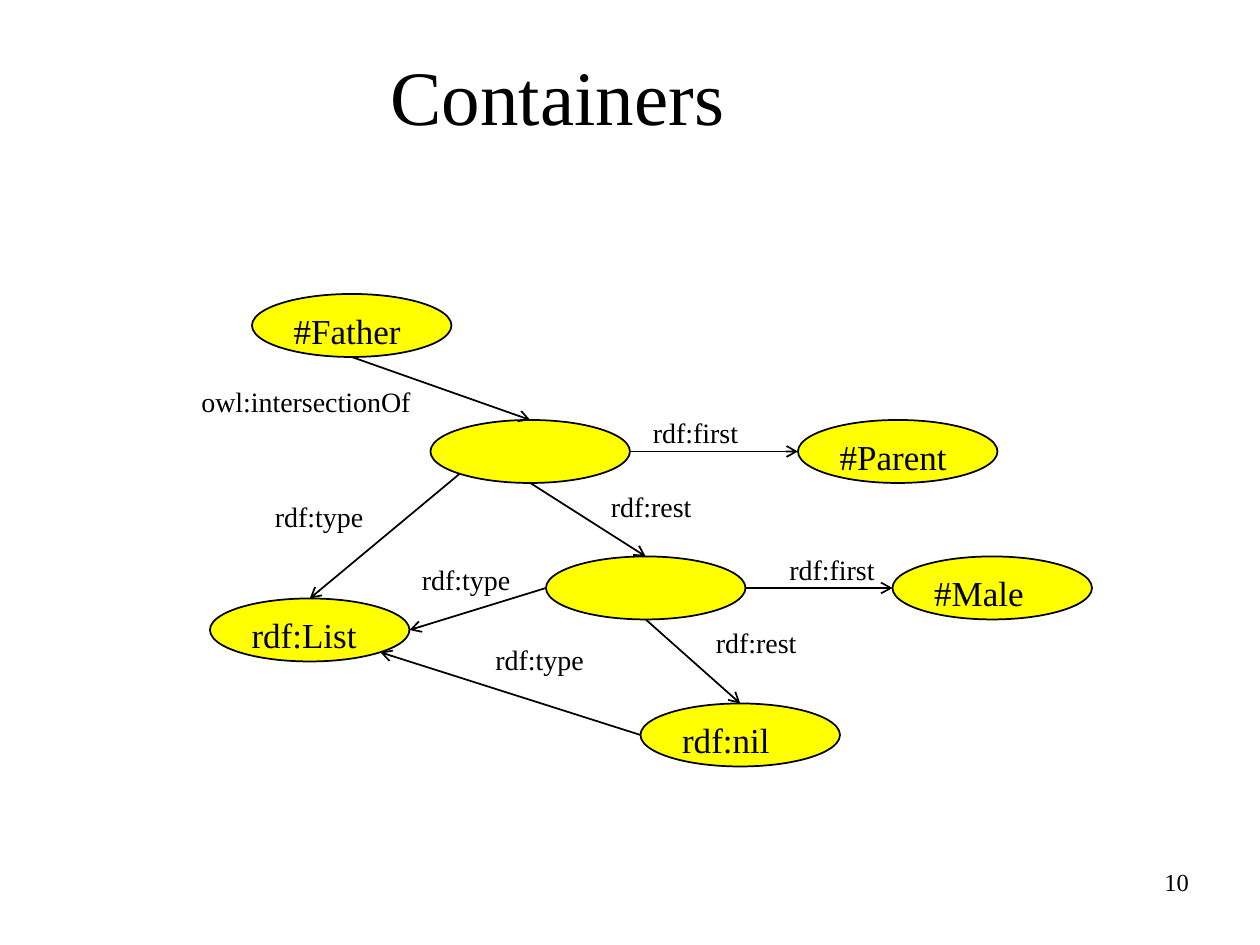
from dataclasses import dataclass
from math import sqrt

from lxml import etree
from pptx import Presentation
from pptx.dml.color import RGBColor
from pptx.enum import shapes, text
from pptx.oxml import ns
from pptx.util import Pt


@dataclass(frozen=True)
class Theme:
    font: str = "Times New Roman"
    ink: RGBColor = RGBColor(0, 0, 0)
    node_fill: RGBColor = RGBColor(0xFF, 0xFF, 0)
    paper: RGBColor = RGBColor(0xFF, 0xFF, 0xFF)
    title_size: int = 44
    node_size: int = 20
    label_size: int = 16
    number_size: int = 14
    line_width: int = 1


@dataclass(frozen=True)
class Node:
    left: float
    top: float
    caption: str = ""


@dataclass(frozen=True)
class Edge:
    source: str
    source_side: str
    target: str
    target_side: str


@dataclass(frozen=True)
class Label:
    caption: str
    left: float
    top: float


THEME = Theme()
NODE_WIDTH, NODE_HEIGHT = 114, 36
LABEL_HEIGHT = 26.6
LABEL_WIDTHS = {"owl:intersectionOf": 136, "rdf:type": 66, "rdf:first": 64, "rdf:rest": 61}
DIAGONAL = (1 - sqrt(0.5)) / 2
SIDES = {
    "top": (0.5, 0),
    "bottom": (0.5, 1),
    "left": (0, 0.5),
    "right": (1, 0.5),
    "bottom left": (DIAGONAL, 1 - DIAGONAL),
    "bottom right": (1 - DIAGONAL, 1 - DIAGONAL),
}

NODES = {
    "parent": Node(456, 240, "#Parent"),
    "male": Node(510, 318, "#Male"),
    "nil": Node(366, 402, "rdf:nil"),
    "list": Node(120, 342, "rdf:List"),
    "second cell": Node(312, 318),
    "first cell": Node(246, 240),
    "father": Node(144, 168, "#Father"),
}
EDGES = [
    Edge("father", "bottom", "first cell", "top"),
    Edge("first cell", "bottom left", "list", "top"),
    Edge("second cell", "left", "list", "right"),
    Edge("first cell", "bottom", "second cell", "top"),
    Edge("second cell", "bottom", "nil", "top"),
    Edge("first cell", "right", "parent", "left"),
    Edge("second cell", "right", "male", "left"),
    Edge("nil", "left", "list", "bottom right"),
]
LABELS = [
    Label("owl:intersectionOf", 108, 216),
    Label("rdf:type", 150, 282),
    Label("rdf:first", 366, 234),
    Label("rdf:first", 444, 312),
    Label("rdf:rest", 342, 276),
    Label("rdf:rest", 402, 354),
    Label("rdf:type", 234, 318),
    Label("rdf:type", 276, 363.6),
]


def write(frame, caption: str, size: int, align=text.PP_ALIGN.LEFT) -> None:
    frame.text = caption
    paragraph = frame.paragraphs[0]
    paragraph.alignment = align
    for run in paragraph.runs:
        run.font.name = THEME.font
        run.font.size = Pt(size)
        run.font.color.rgb = THEME.ink


def draw_title(slide, caption: str) -> None:
    title = slide.shapes.title
    title.left, title.top, title.width, title.height = Pt(216), Pt(30), Pt(492), Pt(54)
    frame = title.text_frame
    frame.auto_size = text.MSO_AUTO_SIZE.NONE
    frame.vertical_anchor = text.MSO_ANCHOR.BOTTOM
    write(frame, caption, THEME.title_size)


def draw_number(slide, caption: str) -> None:
    number = slide.shapes.add_textbox(Pt(540), Pt(486), Pt(150), Pt(36))
    frame = number.text_frame
    frame.word_wrap = False
    frame.vertical_anchor = text.MSO_ANCHOR.MIDDLE
    write(frame, caption, THEME.number_size, text.PP_ALIGN.RIGHT)


def draw_node(slide, node: Node) -> None:
    ellipse = slide.shapes.add_shape(
        shapes.MSO_SHAPE.OVAL, Pt(node.left), Pt(node.top), Pt(NODE_WIDTH), Pt(NODE_HEIGHT)
    )
    ellipse.shadow.inherit = False
    ellipse.fill.solid()
    ellipse.fill.fore_color.rgb = THEME.node_fill
    ellipse.line.color.rgb = THEME.ink
    ellipse.line.width = Pt(THEME.line_width)
    if node.caption:
        ellipse.text_frame.vertical_anchor = text.MSO_ANCHOR.TOP
        write(ellipse.text_frame, node.caption, THEME.node_size)


def anchor(name: str, side: str) -> tuple[Pt, Pt]:
    node = NODES[name]
    across, down = SIDES[side]
    return Pt(node.left + across * NODE_WIDTH), Pt(node.top + down * NODE_HEIGHT)


def draw_edge(slide, edge: Edge) -> None:
    arrow = slide.shapes.add_connector(
        shapes.MSO_CONNECTOR.STRAIGHT,
        *anchor(edge.source, edge.source_side),
        *anchor(edge.target, edge.target_side),
    )
    arrow.line.color.rgb = THEME.ink
    arrow.line.width = Pt(THEME.line_width)
    etree.SubElement(arrow.line._get_or_add_ln(), ns.qn("a:tailEnd"), type="arrow")
    etree.SubElement(arrow._element.spPr, ns.qn("a:effectLst"))


def draw_label(slide, label: Label) -> None:
    box = slide.shapes.add_textbox(
        Pt(label.left), Pt(label.top), Pt(LABEL_WIDTHS[label.caption]), Pt(LABEL_HEIGHT)
    )
    box.text_frame.word_wrap = False
    box.text_frame.auto_size = text.MSO_AUTO_SIZE.SHAPE_TO_FIT_TEXT
    write(box.text_frame, label.caption, THEME.label_size)


def main() -> None:
    deck = Presentation()
    deck.slide_width, deck.slide_height = Pt(720), Pt(540)
    slide = deck.slides.add_slide(deck.slide_layouts.get_by_name("Title Only"))
    slide.background.fill.solid()
    slide.background.fill.fore_color.rgb = THEME.paper
    draw_title(slide, "Containers")
    draw_number(slide, "10 ")
    for node in NODES.values():
        draw_node(slide, node)
    for edge in EDGES:
        draw_edge(slide, edge)
    for label in LABELS:
        draw_label(slide, label)
    deck.save("out.pptx")


if __name__ == "__main__":
    main()
